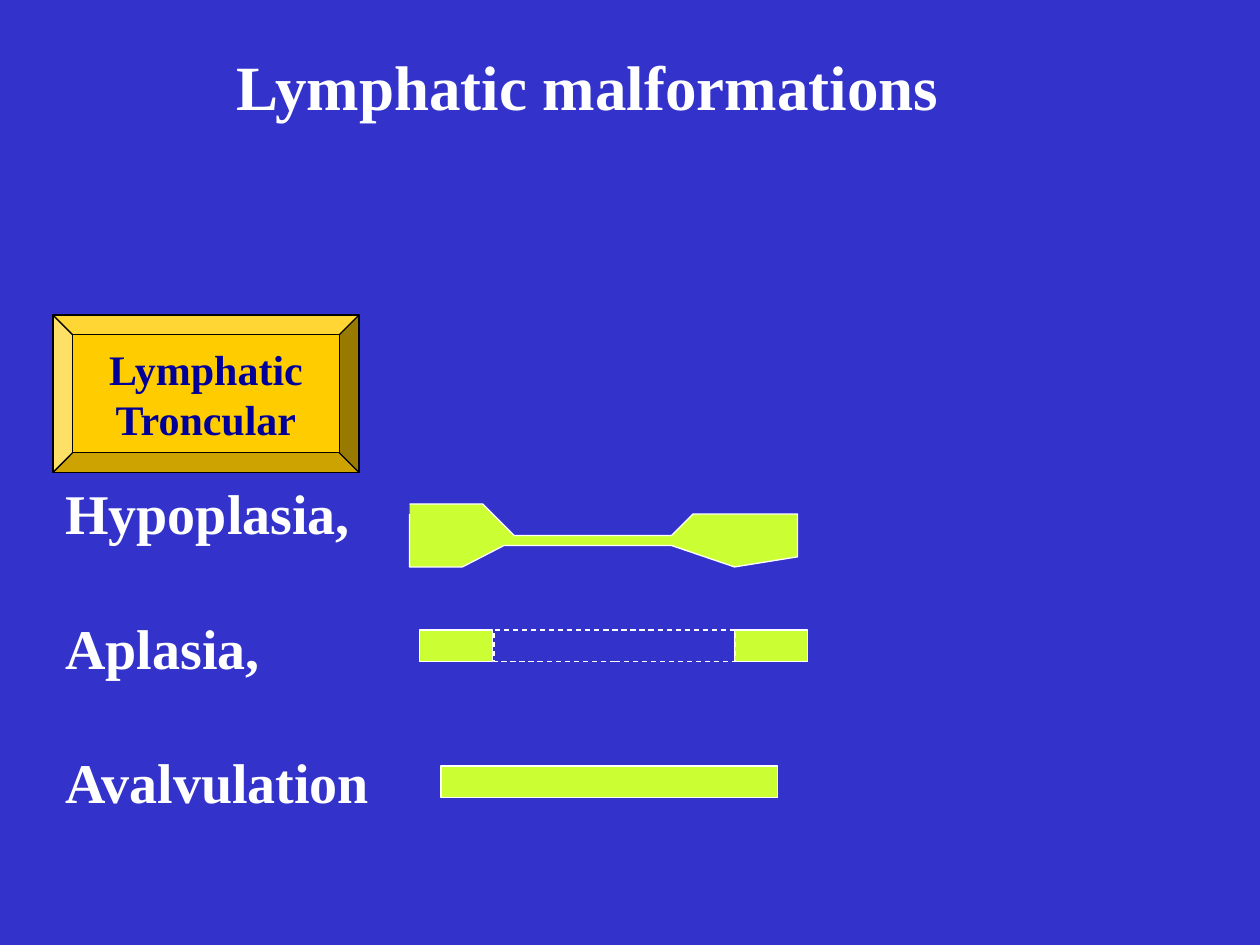
from pptx import Presentation
from pptx.dml.color import RGBColor
from pptx.enum.dml import MSO_LINE
from pptx.enum.shapes import MSO_SHAPE
from pptx.enum.text import MSO_ANCHOR, PP_ALIGN
from pptx.util import Inches, Pt

BLUE = RGBColor(0x33, 0x33, 0xCC)
GOLD = RGBColor(0xFF, 0xCC, 0x00)
NAVY = RGBColor(0x00, 0x00, 0x99)
LIME = RGBColor(0xCC, 0xFF, 0x33)
WHITE = RGBColor(0xFF, 0xFF, 0xFF)
BLACK = RGBColor(0x00, 0x00, 0x00)
BEVEL, RECTANGLE = MSO_SHAPE.BEVEL, MSO_SHAPE.RECTANGLE
DASH = MSO_LINE.DASH
MIDDLE = MSO_ANCHOR.MIDDLE
LEFT, CENTER = PP_ALIGN.LEFT, PP_ALIGN.CENTER


def write(shape, text, size, color, align, gap=0):
    frame = shape.text_frame
    frame.word_wrap = False
    frame.text = text
    for i, paragraph in enumerate(frame.paragraphs):
        paragraph.alignment = align
        if i and gap:
            paragraph.space_before = Pt(gap)
        font = paragraph.runs[0].font
        font.name, font.size, font.bold = "Times New Roman", Pt(size), True
        font.color.rgb = color


def paint(shape, fill, line):
    shape.shadow.inherit = False
    if fill is None:
        shape.fill.background()
    else:
        shape.fill.solid()
        shape.fill.fore_color.rgb = fill
    shape.line.color.rgb = line
    shape.line.width = Pt(0.75)


prs = Presentation()
prs.slide_width, prs.slide_height = Inches(10), Inches(7.5)
slide = prs.slides.add_slide(prs.slide_layouts[6])
slide.background.fill.solid()
slide.background.fill.fore_color.rgb = BLUE
shapes = slide.shapes

# Category plate
category = shapes.add_shape(BEVEL, Inches(0.42), Inches(2.5), Inches(2.43), Inches(1.25))
category.adjustments[0] = 0.125
paint(category, GOLD, BLACK)
category.text_frame.vertical_anchor = MIDDLE
write(category, "Lymphatic\nTroncular", 24, NAVY, CENTER)

# Malformation names, one blank line's height apart
names = shapes.add_textbox(Inches(0.42), Inches(3.75), Inches(2.64), Inches(2.79))
write(names, "Hypoplasia,\nAplasia,\nAvalvulation", 32, WHITE, LEFT, gap=38.4)

# Hypoplasia: vessel with a narrowed middle
outline = [(3.25, 4.08), (3.25, 4.5), (3.67, 4.5), (4, 4.33), (5.33, 4.33),
           (5.83, 4.5), (6.33, 4.42), (6.33, 4.08), (5.5, 4.08),
           (5.33, 4.25), (4.08, 4.25), (3.83, 4), (3.25, 4)]
points = [(Inches(x), Inches(y)) for x, y in outline]
builder = shapes.build_freeform(*points[0])
builder.add_line_segments(points[1:], close=False)
narrow_vessel = builder.convert_to_shape()
paint(narrow_vessel, LIME, WHITE)

# Aplasia: two stumps with the missing stretch dashed
aplasia = shapes.add_group_shape()
for x, width, fill in [(3.33, 0.58, LIME), (5.83, 0.58, LIME), (3.92, 1.92, None)]:
    part = aplasia.shapes.add_shape(RECTANGLE, Inches(x), Inches(5), Inches(width), Inches(0.25))
    paint(part, fill, WHITE)
    if fill is None:
        part.line.dash_style = DASH

# Avalvulation: plain vessel without valves
plain_vessel = shapes.add_shape(RECTANGLE, Inches(3.5), Inches(6.08), Inches(2.67), Inches(0.25))
paint(plain_vessel, LIME, WHITE)

# Title
title = shapes.add_textbox(Inches(1.75), Inches(0.33), Inches(5.83), Inches(0.71))
write(title, "Lymphatic malformations", 36, WHITE, CENTER)

prs.save("out.pptx")
